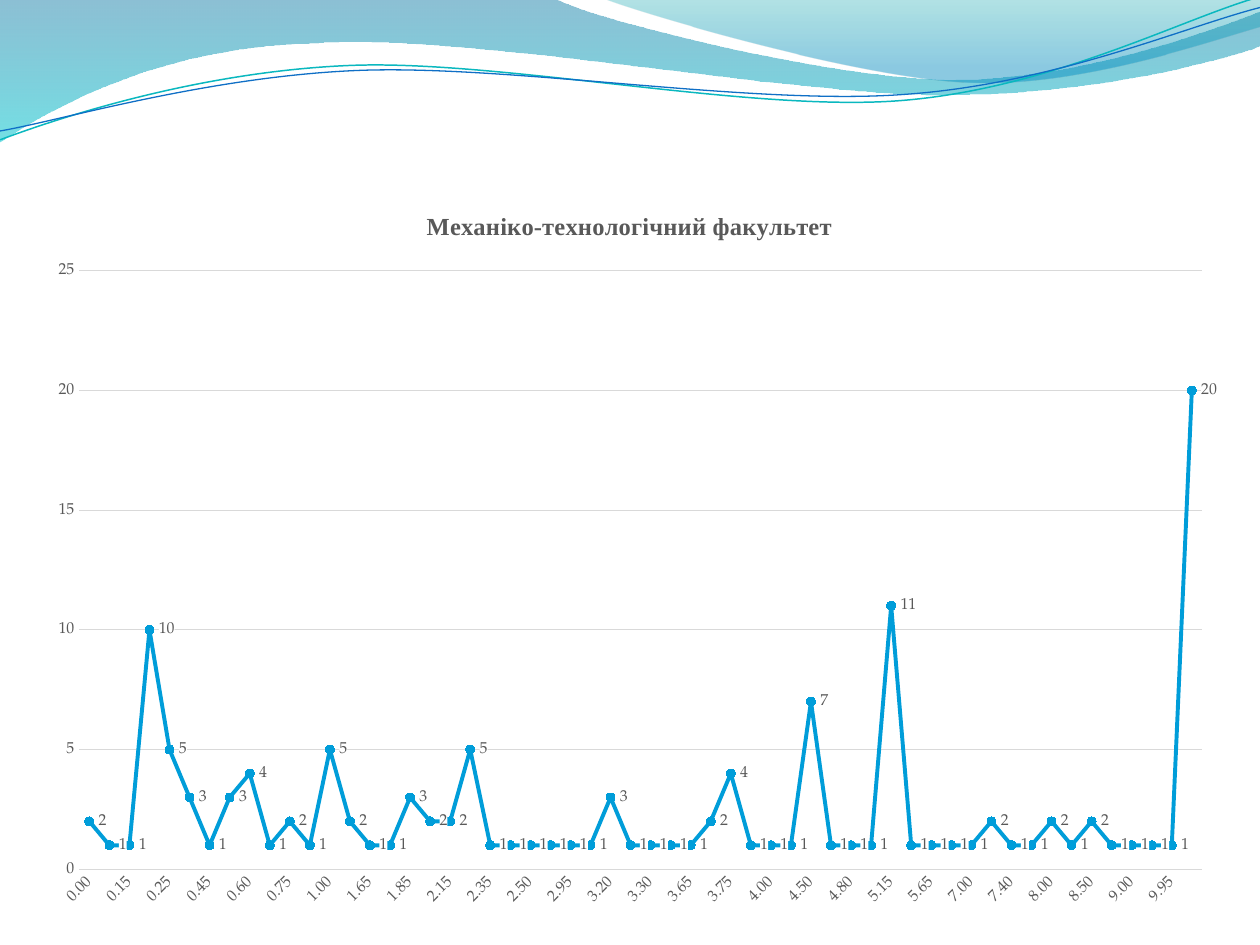
import math

from lxml import etree
from pptx import Presentation
from pptx import util as u
from pptx.chart.data import CategoryChartData
from pptx.dml.color import RGBColor
from pptx.enum import chart as kinds
from pptx.oxml import parse_xml
from pptx.oxml.ns import nsdecls, qn

COLUMNS, ROWS = 10, 7.5
CHART_LEFT, CHART_TOP, CHART_WIDTH, CHART_HEIGHT = 0.28, 1.47, 9.45, 5.83
BODY_FONT = "TeX Gyre Pagella"
GREY, RULE, BLUE, WHITE = "595959", "D9D9D9", "009DD9", "FFFFFF"
TITLE = "Механіко-технологічний факультет"
LINE_TURN = 357.3

LEFT_WAVE = [
    (0, 0), (4.4, -0.01),
    (4.76, 0.17, 6.64, 0.63, 7.58, 0.63), (8.53, 0.63, 9.58, 0.26, 10, 0.09),
    (10.01, 0.36),
    (9.83, 0.44, 8.7, 0.76, 7.46, 0.75), (6.22, 0.75, 3.82, 0.28, 2.57, 0.34),
    (1.29, 0.36, 0.46, 0.83, -0.01, 1.13), (0, 0),
]
RIGHT_WAVE = [
    (4.79, -0.01),
    (5.09, 0.11, 6.82, 0.62, 7.69, 0.65), (8.56, 0.69, 9.61, 0.32, 10, 0.21),
    (10, 0), (4.79, -0.01),
]
TEAL_LINE = [
    (0, 1.11), (0.48, 0.93, 1.58, 0.57, 2.77, 0.52),
    (3.95, 0.47, 5.93, 0.89, 7.13, 0.8), (8.33, 0.71, 9.38, 0.15, 9.98, -0.02),
]
BLUE_LINE = [
    (0, 1.04), (0.47, 0.96, 1.64, 0.61, 2.83, 0.56),
    (4.03, 0.51, 5.97, 0.84, 7.17, 0.75), (8.36, 0.67, 9.41, 0.21, 10, 0.06),
]

SCORES = [
    0, 0.1, 0.15, 0.2, 0.25, 0.4, 0.45, 0.5, 0.6, 0.65, 0.75, 0.95, 1, 1.5,
    1.65, 1.75, 1.85, 2, 2.15, 2.2, 2.35, 2.4, 2.5, 2.8, 2.95, 3, 3.2, 3.25,
    3.3, 3.5, 3.65, 3.7, 3.75, 3.95, 4, 4.3, 4.5, 4.75, 4.8, 5, 5.15, 5.35,
    5.65, 6.15, 7, 7.2, 7.4, 7.5, 8, 8.2, 8.5, 8.65, 9, 9.45, 9.95, 10,
]
COUNTS = [
    2, 1, 1, 10, 5, 3, 1, 3, 4, 1, 2, 1, 5, 2, 1, 1, 3, 2, 2, 5, 1, 1, 1, 1,
    1, 1, 3, 1, 1, 1, 1, 2, 4, 1, 1, 1, 7, 1, 1, 1, 11, 1, 1, 1, 1, 2, 1, 1,
    2, 1, 2, 1, 1, 1, 1, 20,
]


def colour(code):
    return RGBColor.from_string(code)


def to_points(step):
    return [(u.Inches(x), u.Inches(y)) for x, y in zip(step[::2], step[1::2])]


def add_outline(page, steps, close):
    moves = [to_points(step) for step in steps]
    builder = page.shapes.build_freeform(*moves[0][-1])
    builder.add_line_segments([move[-1] for move in moves[1:]], close=close)
    shape = builder.convert_to_shape()
    shape.shadow.inherit = False
    lines = list(shape.element.iter(qn("a:lnTo")))
    for line, move in zip(lines, moves[1:]):
        if len(move) == 3:
            line.tag = qn("a:cubicBezTo")
            for index, (x, y) in enumerate(move[:2]):
                point = etree.Element(
                    qn("a:pt"), x=str(x - shape.left), y=str(y - shape.top)
                )
                line.insert(index, point)
    return shape


def gradient_stop(place, code, alpha):
    return (
        f'<a:gs pos="{place * 1000}"><a:srgbClr val="{code}">'
        f'<a:alpha val="{alpha * 1000}"/></a:srgbClr></a:gs>'
    )


def add_wave(page, steps, stops):
    shape = add_outline(page, steps, True)
    shape.line.fill.background()
    marks = "".join(gradient_stop(*stop) for stop in stops)
    gradient = parse_xml(
        f'<a:gradFill {nsdecls("a")} rotWithShape="1"><a:gsLst>{marks}</a:gsLst>'
        '<a:lin ang="5400000" scaled="0"/></a:gradFill>'
    )
    shape.element.spPr.find(qn("a:custGeom")).addnext(gradient)


def turn_back(step, centre):
    angle = math.radians(360 - LINE_TURN)
    across, down = math.cos(angle), math.sin(angle)
    turned = []
    for x, y in zip(step[::2], step[1::2]):
        dx, dy = x - centre[0], y - centre[1]
        turned += [centre[0] + dx * across - dy * down,
                   centre[1] + dx * down + dy * across]
    return turned


def add_curve(page, steps, centre, code, width):
    level = [turn_back(step, centre) for step in steps]
    shape = add_outline(page, level, False)
    shape.rotation = LINE_TURN
    shape.fill.background()
    shape.line.color.rgb = colour(code)
    shape.line.width = u.Pt(width)


def style_font(font, size, code=GREY, name=BODY_FONT, bold=False):
    font.size, font.name, font.bold = u.Pt(size), name, bold
    font.color.rgb = colour(code)


def style_rule(line):
    line.color.rgb = colour(RULE)
    line.width = u.Pt(0.75)


def white_box():
    return parse_xml(
        f'<c:spPr {nsdecls("c", "a")}><a:solidFill><a:srgbClr val="{WHITE}"/>'
        '</a:solidFill><a:ln><a:noFill/></a:ln></c:spPr>'
    )


def place_part(part, before, **inches):
    for old in part.findall(qn("c:layout")):
        part.remove(old)
    layout = etree.Element(qn("c:layout"))
    manual = etree.SubElement(layout, qn("c:manualLayout"))
    if "w" in inches:
        etree.SubElement(manual, qn("c:layoutTarget"), val="inner")
    for mode in ("xMode", "yMode"):
        etree.SubElement(manual, qn("c:" + mode), val="edge")
    for key, length in inches.items():
        share = length / (CHART_WIDTH if key in "xw" else CHART_HEIGHT)
        etree.SubElement(manual, qn("c:" + key), val=f"{share:.4f}")
    part.insert(before, layout)


def style_title(chart):
    title = chart.chart_title
    span = title.text_frame.paragraphs[0].add_run()
    span.text = TITLE
    style_font(span.font, 14, name="Times New Roman", bold=True)
    title.include_in_layout = False
    place_part(title._element, 1, x=3.07, y=0.16)


def style_axes(chart):
    across, up = chart.category_axis, chart.value_axis
    for axis in (across, up):
        axis.major_tick_mark = axis.minor_tick_mark = kinds.XL_TICK_MARK.NONE
        style_font(axis.tick_labels.font, 9)
    across.tick_labels.number_format = "0.00"
    across.tick_labels.number_format_is_linked = True
    across.has_major_gridlines = False
    style_rule(across.format.line)
    across._element.find(qn("c:txPr")).find(qn("a:bodyPr")).set("rot", "-2700000")
    skip = etree.Element(qn("c:tickLblSkip"), val="2")
    across._element.find(qn("c:noMultiLvlLbl")).addprevious(skip)
    up.minimum_scale, up.maximum_scale, up.major_unit = 0, 25, 5
    up.format.line.fill.background()
    style_rule(up.major_gridlines.format.line)


def style_series(series):
    series.smooth = False
    series.format.line.color.rgb = colour(BLUE)
    series.format.line.width = u.Pt(2.25)
    marker = series.marker
    marker.style, marker.size = kinds.XL_MARKER_STYLE.CIRCLE, 5
    marker.format.fill.solid()
    marker.format.fill.fore_color.rgb = colour(BLUE)
    marker.format.line.color.rgb = colour(BLUE)
    labels = series.data_labels
    labels.show_value = True
    labels.position = kinds.XL_LABEL_POSITION.RIGHT
    labels.number_format, labels.number_format_is_linked = "0", False
    style_font(labels.font, 9)
    labels._element.find(qn("c:numFmt")).addnext(white_box())


def add_score_chart(page):
    data = CategoryChartData()
    data.categories = SCORES
    data.categories.number_format = "0.00"
    data.add_series("Series 1", COUNTS)
    place = map(u.Inches, (CHART_LEFT, CHART_TOP, CHART_WIDTH, CHART_HEIGHT))
    chart = page.shapes.add_chart(kinds.XL_CHART_TYPE.LINE_MARKERS, *place, data).chart
    chart.has_legend = False
    style_font(chart.font, 10, "000000")
    style_title(chart)
    style_axes(chart)
    chart.plots[0].vary_by_categories = False
    style_series(chart.plots[0].series[0])
    body = chart._chartSpace.chart
    place_part(body.plotArea, 0, x=0.35, y=0.68, w=8.91, h=4.75)
    body.addnext(white_box())


def main():
    deck = Presentation()
    deck.slide_width, deck.slide_height = u.Inches(COLUMNS), u.Inches(ROWS)
    page = deck.slides.add_slide(deck.slide_layouts[6])
    add_wave(page, LEFT_WAVE, [(0, "0074A1", 45), (100, "00C6CF", 55)])
    add_wave(page, RIGHT_WAVE, [(0, "00A1A9", 30), (80, "008BBF", 45)])
    add_curve(page, TEAL_LINE, (4.99, 0.58), "0AB8BF", 0.85)
    add_curve(page, BLUE_LINE, (5, 0.59), "0F6FC6", 0.75)
    add_score_chart(page)
    deck.save("out.pptx")


if __name__ == "__main__":
    main()
